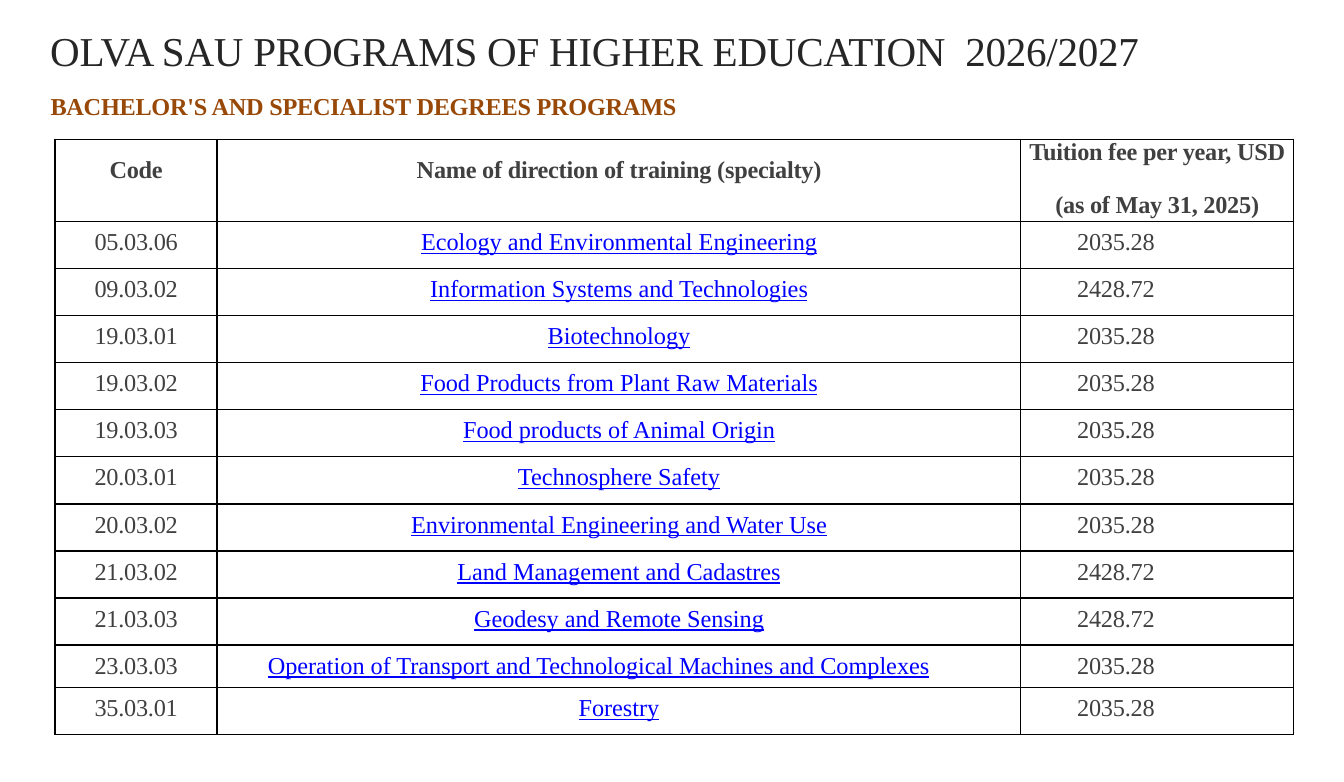
from pptx import Presentation
from pptx.dml.color import RGBColor
from pptx.enum.text import MSO_ANCHOR, PP_ALIGN
from pptx.oxml.ns import qn
from pptx.util import Pt
from lxml.etree import SubElement

ROWS = [
    ("05.03.06", "Ecology and Environmental Engineering", "2035.28"),
    ("09.03.02", "Information Systems and Technologies", "2428.72"),
    ("19.03.01", "Biotechnology", "2035.28"),
    ("19.03.02", "Food Products from Plant Raw Materials", "2035.28"),
    ("19.03.03", "Food products of Animal Origin", "2035.28"),
    ("20.03.01", "Technosphere Safety", "2035.28"),
    ("20.03.02", "Environmental Engineering and Water Use", "2035.28"),
    ("21.03.02", "Land Management and Cadastres", "2428.72"),
    ("21.03.03", "Geodesy and Remote Sensing", "2428.72"),
    ("23.03.03", "Operation of Transport and Technological Machines and Complexes", "2035.28"),
    ("35.03.01", "Forestry", "2035.28"),
]
HEADS = [["Code"], ["Name of direction of training (specialty)"],
         ["Tuition fee per year, USD", "(as of May 31, 2025)"]]
WIDTHS = [86.8, 430.5, 146.2]
HEAD_HIGH, ROW_HIGH, LOW_HIGH = 44, 25.2, 22.8
LOW_ROW = 10
FEE_EDGE = 74.5
LONG_LEFT = 27.2


def paint(code):
    return RGBColor.from_string(code)


class Deck:
    font = "Times New Roman"
    ink = "404040"
    link = "0000FF"
    edge = "000000"

    def __init__(self, width, height):
        self.show = Presentation()
        self.show.slide_width, self.show.slide_height = Pt(width), Pt(height)
        self.slide = self.show.slides.add_slide(self.show.slide_layouts[5])

    def text(self, frame, lines, size=13, color=ink, align=PP_ALIGN.LEFT,
             gap=0, tight=-10, **style):
        frame.word_wrap = True
        for i, line in enumerate(lines):
            para = frame.add_paragraph() if i else frame.paragraphs[0]
            para.alignment = align
            para.space_before = Pt(gap if i else 0)
            run = para.add_run()
            run.text = line
            look = {"name": self.font, "size": Pt(size), "bold": False, **style}
            for key, value in look.items():
                setattr(run.font, key, value)
            run.font.color.rgb = paint(color)
            run._r.get_or_add_rPr().set("spc", str(tight))

    def place(self, shape, left, top, width, height):
        box = {"left": left, "top": top, "width": width, "height": height}
        for key, value in box.items():
            setattr(shape, key, Pt(value))

    def inset(self, part, left=0, top=0, right=0, bottom=0):
        sides = {"left": left, "top": top, "right": right, "bottom": bottom}
        for key, value in sides.items():
            setattr(part, f"margin_{key}", Pt(value))

    def title(self, words, box, **style):
        shape = self.slide.shapes.title
        self.place(shape, *box)
        frame = shape.text_frame
        frame.vertical_anchor = MSO_ANCHOR.TOP
        self.inset(frame, left=1.5, top=8.5)
        self.text(frame, [words], **style)

    def label(self, words, box, **style):
        shape = self.slide.shapes.add_textbox(*map(Pt, box))
        self.text(shape.text_frame, [words], **style)

    def border(self, cell):
        props = cell._tc.get_or_add_tcPr()
        for side in ("lnL", "lnR", "lnT", "lnB"):
            line = SubElement(props, qn(f"a:{side}"), w=str(Pt(1)))
            fill = SubElement(line, qn("a:solidFill"))
            SubElement(fill, qn("a:srgbClr"), val=self.edge)

    def cell(self, cell, lines, sides, **style):
        self.border(cell)
        cell.fill.background()
        cell.vertical_anchor = MSO_ANCHOR.TOP
        self.inset(cell, **sides)
        self.text(cell.text_frame, lines, **style)

    def table(self, left, top):
        highs = [HEAD_HIGH] + [ROW_HIGH] * len(ROWS)
        highs[LOW_ROW] = LOW_HIGH
        box = (left, top, sum(WIDTHS), sum(highs))
        grid = self.slide.shapes.add_table(len(highs), len(WIDTHS), *map(Pt, box)).table
        for col, width in zip(grid.columns, WIDTHS):
            col.width = Pt(width)
        for row, high in zip(grid.rows, highs):
            row.height = Pt(high)
        mid = PP_ALIGN.CENTER
        for c, lines in enumerate(HEADS):
            head_top = 0 if len(lines) > 1 else 9.4
            self.cell(grid.cell(0, c), lines, {"top": head_top}, align=mid, gap=14, bold=True)
        for r, (code, name, fee) in enumerate(ROWS, 1):
            long = r == LOW_ROW
            self.cell(grid.cell(r, 0), [code], {"top": 4.2}, align=mid)
            self.cell(grid.cell(r, 1), [name], {"top": 4.2, "left": LONG_LEFT if long else 0},
                      align=PP_ALIGN.LEFT if long else mid,
                      color=self.link, tight=0, underline=True)
            self.cell(grid.cell(r, 2), [fee], {"top": 4.2, "right": FEE_EDGE},
                      align=PP_ALIGN.RIGHT)


def main():
    deck = Deck(720, 419)
    deck.table(29.5, 74.7)
    deck.title("OLVA SAU PROGRAMS OF HIGHER EDUCATION  2026/2027",
               (25.4, 5, 638.6, 39.6), size=22, color="262626")
    deck.label("BACHELOR'S AND SPECIALIST DEGREES PROGRAMS",
               (20, 45.5, 513.4, 23), color="984807", bold=True)
    deck.show.save("out.pptx")


if __name__ == "__main__":
    main()
